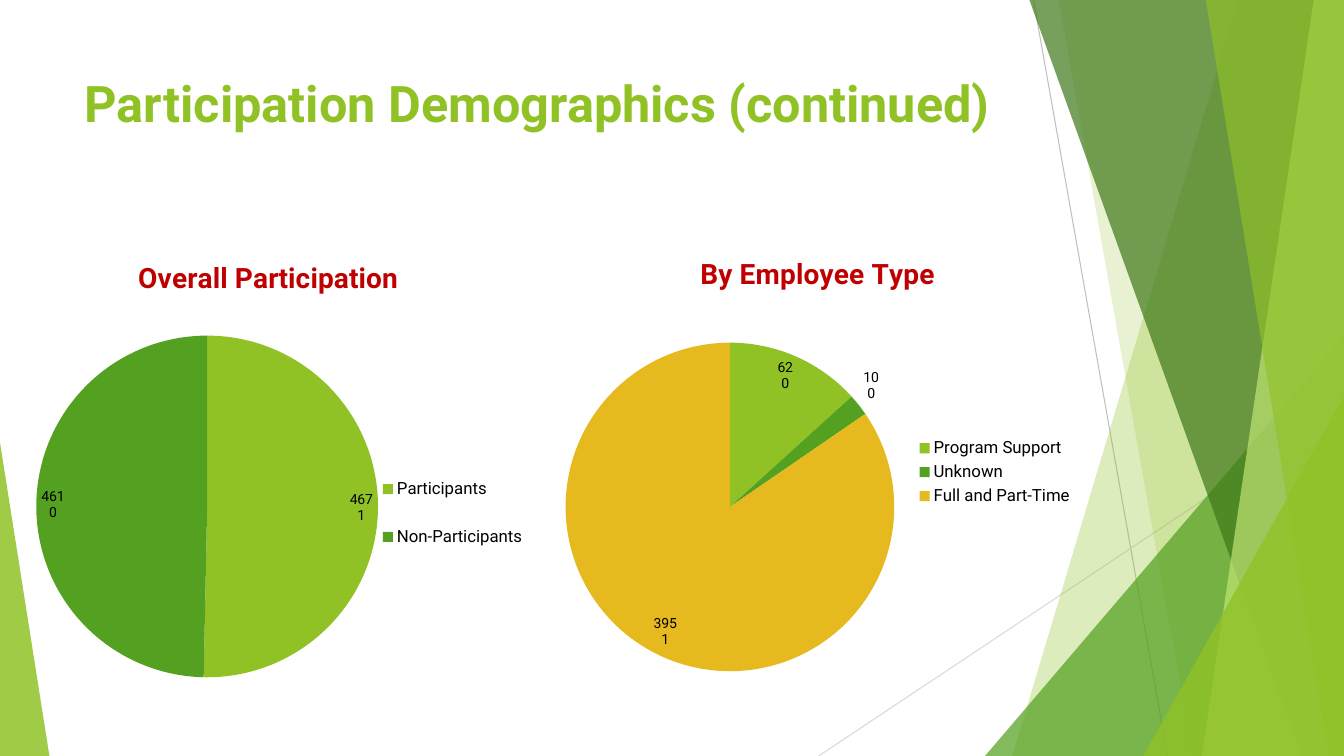
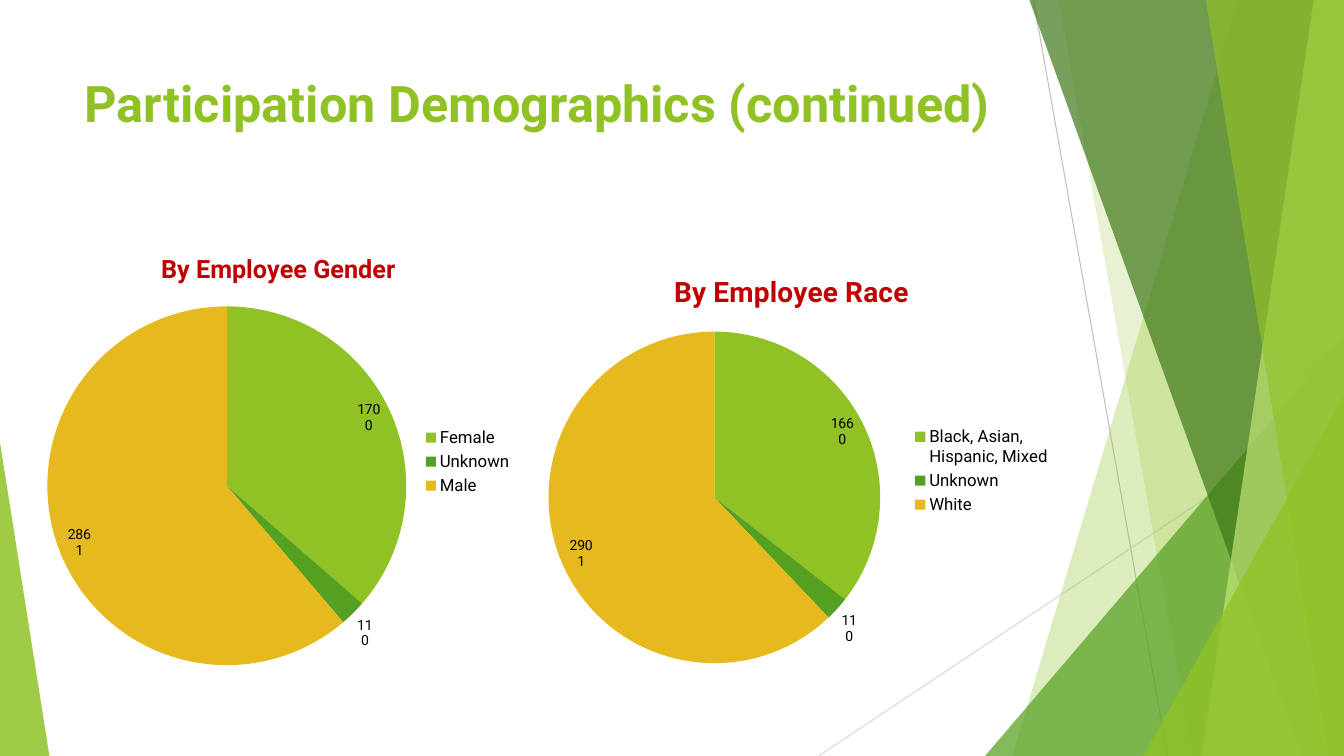
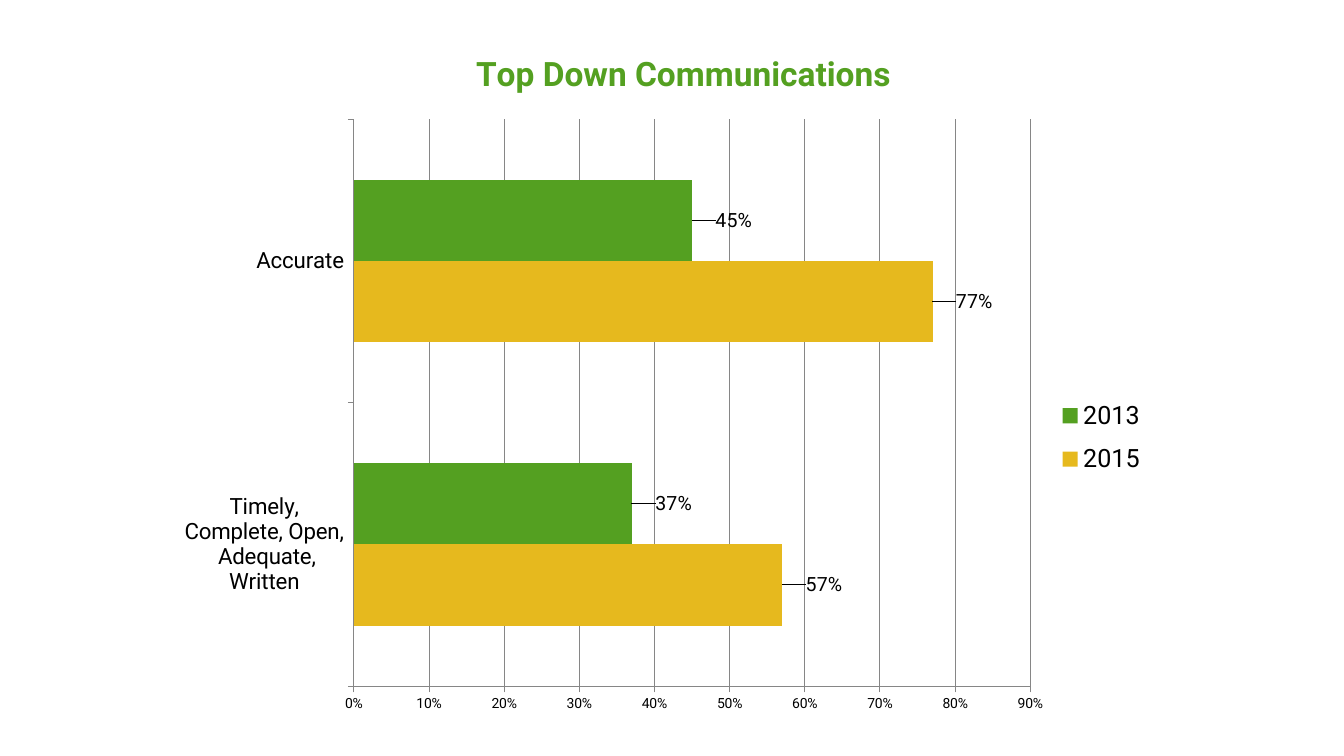
from dataclasses import dataclass

from lxml import etree
from pptx import Presentation
from pptx.chart.data import CategoryChartData
from pptx.dml.color import RGBColor
from pptx.enum.chart import XL_CHART_TYPE, XL_LABEL_POSITION, XL_LEGEND_POSITION, XL_TICK_MARK
from pptx.enum.shapes import MSO_CONNECTOR, MSO_SHAPE
from pptx.enum.text import MSO_ANCHOR, PP_ALIGN
from pptx.oxml.ns import qn
from pptx.util import Inches, Pt

PIE, BAR = XL_CHART_TYPE.PIE, XL_CHART_TYPE.BAR_CLUSTERED
BEST, OUTER = XL_LABEL_POSITION.BEST_FIT, XL_LABEL_POSITION.OUTSIDE_END
RIGHT = XL_LEGEND_POSITION.RIGHT
TICK_OUT = XL_TICK_MARK.OUTSIDE
LINE, TRIANGLE = MSO_CONNECTOR.STRAIGHT, MSO_SHAPE.ISOSCELES_TRIANGLE
TOP, LEFT = MSO_ANCHOR.TOP, PP_ALIGN.LEFT

FONT = "Roboto"
WIDE, HIGH = 13.33, 7.5
COLORS = {
    "lime": "90C226", "green": "54A021", "forest": "3F7819", "pale": "C0E474",
    "gold": "E6B91E", "red": "C00000", "black": "000000",
    "gray": "868686", "silver": "BFBFBF", "mist": "D9D9D9",
}
SLICES = ("lime", "green", "gold")
HEADING = "Participation Demographics (continued)"

Box = tuple[float, float, float, float]


@dataclass
class Ray:
    start: tuple[float, float]
    end: tuple[float, float]
    color: str


@dataclass
class Band:
    """A strip from its slanted left edge to the right edge of the slide."""
    top: float
    foot: float
    color: str
    alpha: int


@dataclass
class Wedge:
    box: Box
    tip: float
    color: str
    alpha: int


@dataclass
class Pie:
    title: str
    box: Box
    disc: tuple[float, float, float]
    cats: tuple[str, ...]
    vals: tuple[int, ...]
    size: int = 20
    head: Box | None = None
    key: Box | None = None


@dataclass
class Bars:
    name: str
    vals: tuple[float, ...]
    color: str


FACETS = (
    Ray((10.25, 0), (11.58, HIGH), "silver"),
    Ray((WIDE, 4.03), (8.12, HIGH), "mist"),
    Band(12.28, 10.04, "lime", 30),
    Band(10.5, 11.83, "lime", 20),
    Wedge((9.77, 3.33, 3.56, 4.17), 1, "green", 72),
    Band(10.21, 12.91, "forest", 70),
    Band(13.03, 11.92, "pale", 70),
    Band(11.96, 13.18, "lime", 65),
    Wedge((11.34, 3.93, 1.99, 3.57), 1, "lime", 80),
    Wedge((0, 4.39, 0.49, 3.11), 0, "lime", 85),
)

PIES = (
    (
        Pie("Overall Participation", (0.22, 2.36, 5.24, 4.67), (0.36, 3.33, 3.39),
            ("Participants", "Non-Participants"), (467, 461),
            head=(1.32, 2.52, 2.6, 0.4), key=(3.64, 4.48, 1.7, 1.22)),
        Pie("By Employee Type", (5.47, 2.33, 5.28, 4.71), (5.61, 3.4, 3.26),
            ("Program Support", "Unknown", "Full and Part-Time"), (62, 10, 395)),
    ),
    (
        Pie("By Employee Gender", (0.33, 2.31, 4.86, 4.54), (0.47, 3.04, 3.56),
            ("Female", "Unknown", "Male"), (170, 11, 286), size=18),
        Pie("By Employee Race", (5.17, 2.52, 5.36, 4.3), (5.44, 3.29, 3.29),
            ("Black, Asian, Hispanic, Mixed", "Unknown", "White"), (166, 11, 290)),
    ),
)

TOPICS = ("Timely, Complete, Open,\n Adequate, Written", "Accurate")
YEARS = (Bars("2015", (0.57, 0.77), "gold"), Bars("2013", (0.37, 0.45), "green"))


def rgb(name: str) -> RGBColor:
    return RGBColor.from_string(COLORS[name])


def style(font, size: int, color: str = "black", bold: bool = False) -> None:
    font.name, font.size, font.bold = FONT, Pt(size), bold
    font.color.rgb = rgb(color)


def paint(shape, color: str, alpha: int) -> None:
    shape.shadow.inherit = False
    shape.line.fill.background()
    shape.fill.solid()
    shape.fill.fore_color.rgb = rgb(color)
    tint = shape.element.spPr.find(".//" + qn("a:srgbClr"))
    etree.SubElement(tint, qn("a:alpha"), val=str(alpha * 1000))


def draw_facet(shapes, facet: Ray | Band | Wedge):
    if isinstance(facet, Ray):
        line = shapes.add_connector(LINE, *map(Inches, facet.start + facet.end))
        line.line.color.rgb = rgb(facet.color)
        line.line.width = Pt(0.75)
        etree.SubElement(line.element.spPr, qn("a:effectLst"))
        return line
    if isinstance(facet, Band):
        path = shapes.build_freeform(Inches(facet.top), 0)
        corners = ((WIDE, 0), (WIDE, HIGH), (facet.foot, HIGH))
        path.add_line_segments([(Inches(x), Inches(y)) for x, y in corners])
        shape = path.convert_to_shape()
    else:
        shape = shapes.add_shape(TRIANGLE, *map(Inches, facet.box))
        shape.adjustments[0] = facet.tip
    paint(shape, facet.color, facet.alpha)
    return shape


def place(node, index: int, inner: bool = False, **parts: float) -> None:
    """Give a chart part a manual layout, in fractions of the chart."""
    for old in node.findall(qn("c:layout")):
        node.remove(old)
    layout = etree.Element(qn("c:layout"))
    manual = etree.SubElement(layout, qn("c:manualLayout"))
    if inner:
        etree.SubElement(manual, qn("c:layoutTarget"), val="inner")
    if "y" in parts:
        for mode in ("xMode", "yMode"):
            etree.SubElement(manual, qn("c:" + mode), val="edge")
    for name, part in parts.items():
        etree.SubElement(manual, qn("c:" + name), val=f"{part:.4f}")
    node.insert(index, layout)


def share(part: Box, frame: Box) -> dict[str, float]:
    """Turn a box in inches into fractions of its frame."""
    x, y, w, h = part
    left, top, wide, high = frame
    return {"x": (x - left) / wide, "y": (y - top) / high, "w": w / wide, "h": h / high}


def add_graph(slide, kind, box: Box, data, title: str, size: int, color: str, key: int):
    chart = slide.shapes.add_chart(kind, *map(Inches, box), data).chart
    style(chart.font, 10)
    chart.has_title = True
    frame = chart.chart_title.text_frame
    frame.text = title
    style(frame.paragraphs[0].font, size, color, True)
    chart.has_legend = True
    chart.legend.position = RIGHT
    chart.legend.include_in_layout = False
    style(chart.legend.font, key)
    return chart


def find(chart, name: str):
    return chart.element.find(".//" + qn("c:" + name))


def add_pie(slide, pie: Pie) -> None:
    data = CategoryChartData(number_format="0")
    data.categories = pie.cats
    data.add_series("Series 1", pie.vals)
    chart = add_graph(slide, PIE, pie.box, data, pie.title, pie.size, "red", 12)
    x, y, size = pie.disc
    place(find(chart, "plotArea"), 0, True, **share((x, y, size, size), pie.box))
    if pie.head:
        spot = share(pie.head, pie.box)
        place(find(chart, "title"), 1, x=spot["x"], y=spot["y"])
    if pie.key:
        place(find(chart, "legend"), 1, **share(pie.key, pie.box))

    series = chart.plots[0].series[0]
    for i, color in enumerate(SLICES[:len(pie.vals)]):
        fill = series.points[i].format.fill
        fill.solid()
        fill.fore_color.rgb = rgb(color)
    labels = series.data_labels
    labels.show_value = labels.show_percentage = True
    labels.number_format, labels.number_format_is_linked = "0", False
    labels.position = BEST
    style(labels.font, 10)
    gap = etree.Element(qn("c:separator"))
    gap.text = "\n"
    find(chart, "showBubbleSize").addnext(gap)


def add_bars(slide) -> None:
    box = (1.83, 0.17, 9.67, 7.17)
    data = CategoryChartData(number_format="0%")
    data.categories = TOPICS
    for year in YEARS:
        data.add_series(year.name, year.vals)
    chart = add_graph(slide, BAR, box, data, "Top Down Communications", 24, "green", 18)
    place(find(chart, "plotArea"), 0, True, x=0.17, y=0.141, w=0.697, h=0.785)
    spot = share((4.63, 0.45, 4.1, 0.4), box)
    place(find(chart, "title"), 1, x=spot["x"], y=spot["y"])
    place(find(chart, "legend"), 1, **share((10.42, 3.84, 1, 1), box))

    plot = chart.plots[0]
    plot.gap_width, plot.overlap, plot.vary_by_categories = 150, 0, False
    for year, series in zip(YEARS, plot.series):
        series.format.fill.solid()
        series.format.fill.fore_color.rgb = rgb(year.color)
        for i in range(len(TOPICS)):
            label = series.points[i].data_label
            style(label.font, 14)
            label.position = OUTER
    for node in list(chart.element.iter(qn("c:dLbl"))):
        place(node, 1, x=0.02)

    value, topic = chart.value_axis, chart.category_axis
    value.minimum_scale, value.maximum_scale, value.major_unit = 0, 0.9, 0.1
    value.tick_labels.number_format = "0%"
    value.tick_labels.number_format_is_linked = False
    value.has_major_gridlines = True
    value.major_gridlines.format.line.color.rgb = rgb("gray")
    style(topic.tick_labels.font, 16)
    for axis in (value, topic):
        axis.major_tick_mark = TICK_OUT
        axis.format.line.color.rgb = rgb("gray")


def set_layout(layout, slide) -> None:
    """Put the facets and the title's place on the layout that slides share."""
    for facet in FACETS:
        shape = draw_facet(slide.shapes, facet)
        layout.shapes.element.append(shape.element)
    title = layout.placeholders[0]
    title.left, title.top, title.width, title.height = map(Inches, (0.74, 0.67, 9.58, 1.44))
    title.text_frame.vertical_anchor = TOP


def add_title(slide) -> None:
    frame = slide.shapes.title.text_frame
    frame.text = HEADING
    line = frame.paragraphs[0]
    line.alignment = LEFT
    style(line.font, 36, "lime", True)


def main() -> None:
    deck = Presentation()
    deck.slide_width, deck.slide_height = Inches(WIDE), Inches(HIGH)
    titled, blank = deck.slide_layouts[5], deck.slide_layouts[6]
    for i, pair in enumerate(PIES):
        slide = deck.slides.add_slide(titled)
        if i == 0:
            set_layout(titled, slide)
        add_title(slide)
        for pie in pair:
            add_pie(slide, pie)
    add_bars(deck.slides.add_slide(blank))
    deck.save("out.pptx")


if __name__ == "__main__":
    main()
